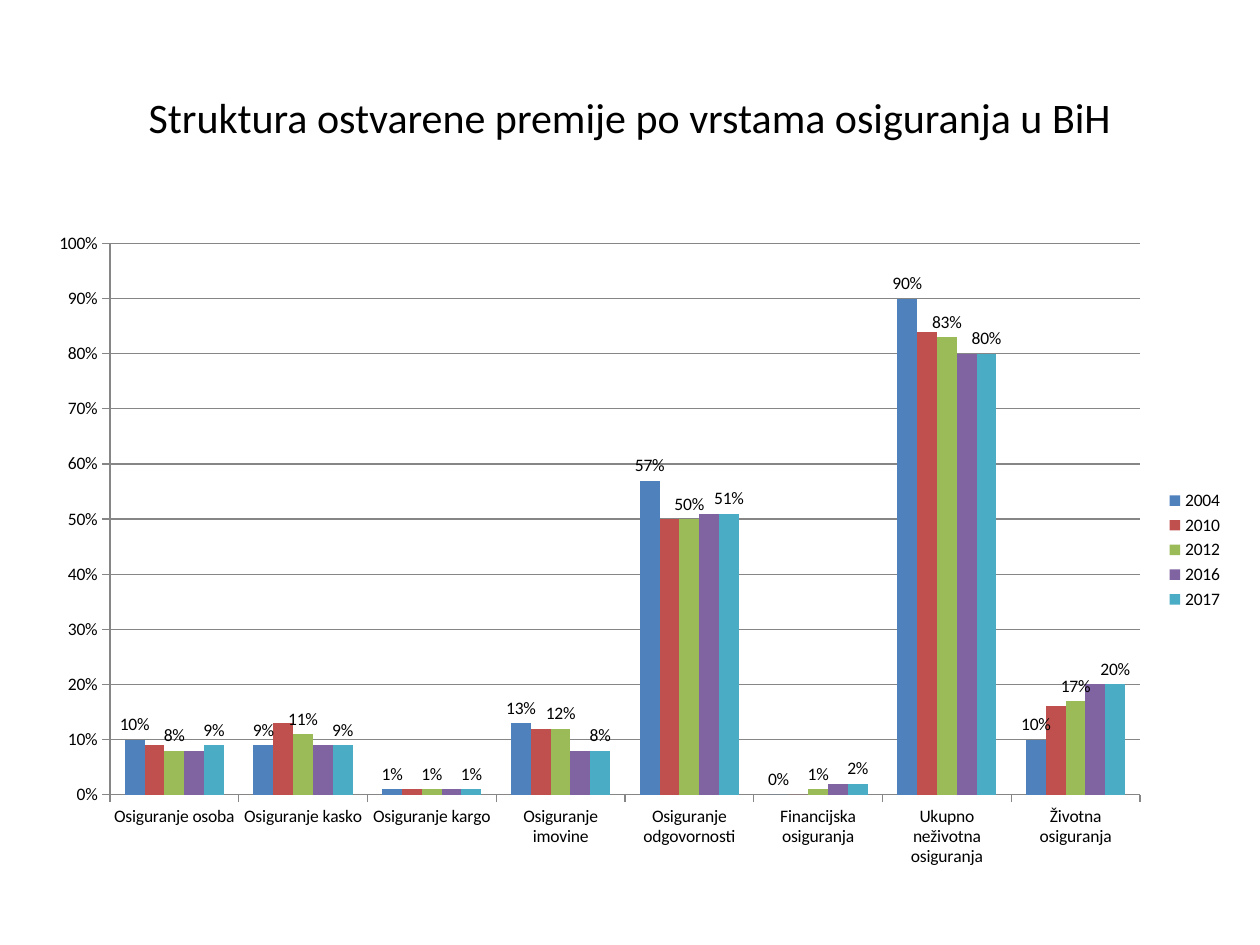
import pptx
import pptx.util
import pptx.chart.data
from pptx.dml.color import RGBColor
from pptx.enum.chart import XL_CHART_TYPE, XL_LABEL_POSITION, XL_LEGEND_POSITION, XL_TICK_MARK
from pptx.enum.text import MSO_ANCHOR, PP_ALIGN

FONT = "Calibri"
BLACK, GREY = "000000", "868686"
HEADING = "Struktura ostvarene premije po vrstama osiguranja u BiH"
INSURANCE_TYPES = [
    "Osiguranje osoba", "Osiguranje kasko", "Osiguranje kargo", "Osiguranje imovine",
    "Osiguranje odgovornosti", "Financijska osiguranja",
    "Ukupno neživotna osiguranja", "Životna osiguranja",
]
# year, colour, labelled, share of premium per insurance type
YEARS = [
    ("2004", "4F81BD", True, (0.10, 0.09, 0.01, 0.13, 0.57, 0.00, 0.90, 0.10)),
    ("2010", "C0504D", False, (0.09, 0.13, 0.01, 0.12, 0.50, 0.00, 0.84, 0.16)),
    ("2012", "9BBB59", True, (0.08, 0.11, 0.01, 0.12, 0.50, 0.01, 0.83, 0.17)),
    ("2016", "8064A2", False, (0.08, 0.09, 0.01, 0.08, 0.51, 0.02, 0.80, 0.20)),
    ("2017", "4BACC6", True, (0.09, 0.09, 0.01, 0.08, 0.51, 0.02, 0.80, 0.20)),
]


def color(hex_string):
    return RGBColor.from_string(hex_string)


def style_font(font, size):
    font.name = FONT
    font.size = pptx.util.Pt(size)
    font.color.rgb = color(BLACK)


def style_line(line):
    line.color.rgb = color(GREY)
    line.width = pptx.util.Pt(0.75)


def add_heading(slide, *box):
    frame = slide.shapes.add_textbox(*map(pptx.util.Inches, box)).text_frame
    frame.word_wrap = True
    frame.vertical_anchor = MSO_ANCHOR.MIDDLE
    paragraph = frame.paragraphs[0]
    paragraph.alignment = PP_ALIGN.CENTER
    run = paragraph.add_run()
    run.text = HEADING
    style_font(run.font, 24)


def add_premium_chart(slide, *box):
    premiums = pptx.chart.data.CategoryChartData(number_format="0%")
    premiums.categories = INSURANCE_TYPES
    for year, _, _, shares in YEARS:
        premiums.add_series(year, shares)
    chart = slide.shapes.add_chart(
        XL_CHART_TYPE.COLUMN_CLUSTERED, *map(pptx.util.Inches, box), premiums).chart
    style_font(chart.font, 10)
    chart.has_title = False
    chart.has_legend = True
    chart.legend.position = XL_LEGEND_POSITION.RIGHT
    chart.legend.include_in_layout = False

    for axis in (chart.category_axis, chart.value_axis):
        axis.major_tick_mark = XL_TICK_MARK.OUTSIDE
        axis.minor_tick_mark = XL_TICK_MARK.NONE
        style_line(axis.format.line)
    share_axis = chart.value_axis
    share_axis.minimum_scale, share_axis.maximum_scale, share_axis.major_unit = 0, 1, 0.1
    share_axis.tick_labels.number_format = "0%"
    share_axis.tick_labels.number_format_is_linked = False
    share_axis.has_major_gridlines = True
    style_line(share_axis.major_gridlines.format.line)

    plot = chart.plots[0]
    plot.gap_width, plot.overlap = 150, 0
    plot.vary_by_categories = False
    for series, (_, fill, labelled, _) in zip(plot.series, YEARS):
        series.invert_if_negative = False
        series.format.fill.solid()
        series.format.fill.fore_color.rgb = color(fill)
        if labelled:
            labels = series.data_labels
            labels.show_value = True
            labels.number_format = "0%"
            labels.number_format_is_linked = False
            labels.position = XL_LABEL_POSITION.OUTSIDE_END
            style_font(labels.font, 10)


def main():
    deck = pptx.Presentation()
    deck.slide_width, deck.slide_height = pptx.util.Inches(10), pptx.util.Inches(7.5)
    slide = deck.slides.add_slide(deck.slide_layouts[6])
    add_heading(slide, 0.5, 0.3, 9, 1.25)
    add_premium_chart(slide, 0.28, 1.75, 9.53, 5.23)
    deck.save("out.pptx")


if __name__ == "__main__":
    main()
